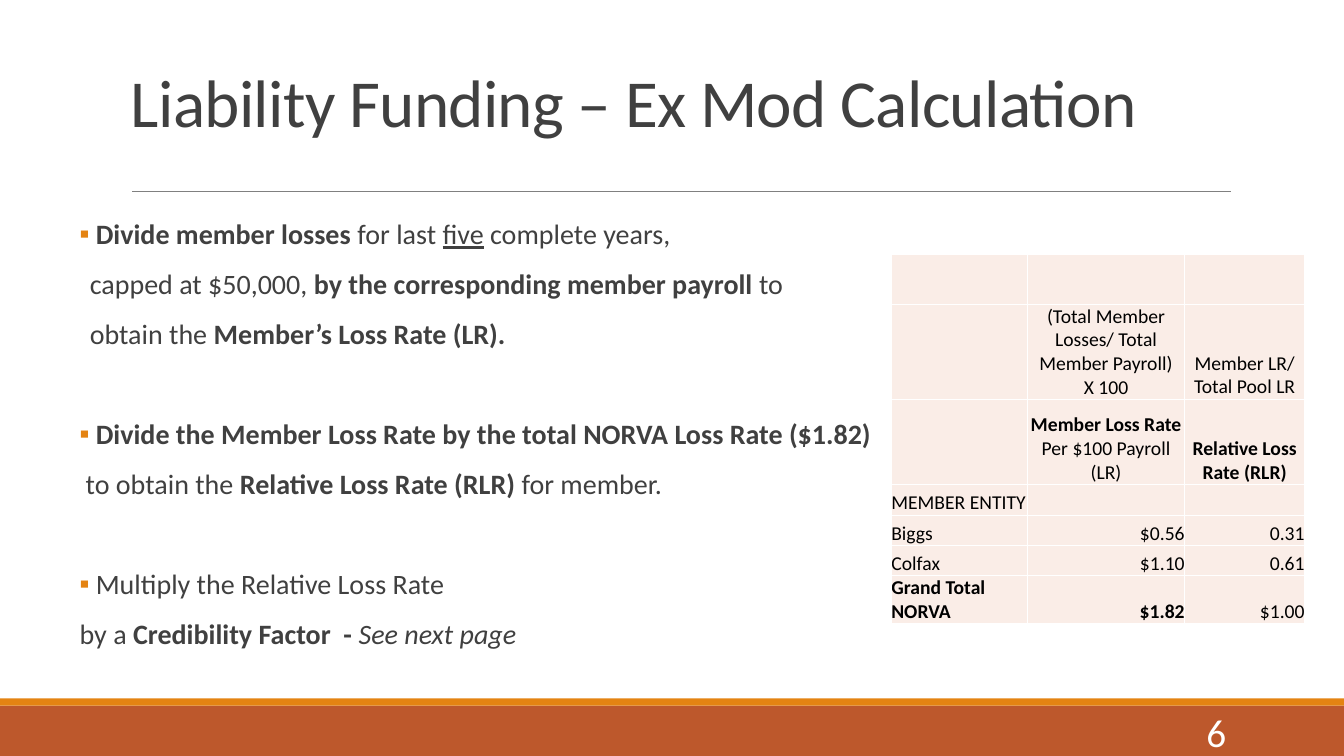
"""Build the liability funding slide with its loss rate table."""
from pptx import Presentation
from pptx.dml.color import RGBColor
from pptx.enum.shapes import MSO_CONNECTOR, MSO_SHAPE
from pptx.enum.text import MSO_ANCHOR, PP_ALIGN
from pptx.oxml.ns import qn
from pptx.util import Inches, Pt
from lxml import etree

LEFT, CENTER, RIGHT = PP_ALIGN.LEFT, PP_ALIGN.CENTER, PP_ALIGN.RIGHT
TOP, MIDDLE, BOTTOM = MSO_ANCHOR.TOP, MSO_ANCHOR.MIDDLE, MSO_ANCHOR.BOTTOM
RECTANGLE, STRAIGHT = MSO_SHAPE.RECTANGLE, MSO_CONNECTOR.STRAIGHT
RUST = RGBColor(0xBD, 0x58, 0x2C)
ORANGE = RGBColor(0xE4, 0x83, 0x12)
GRAY = RGBColor(0x80, 0x80, 0x80)
CHARCOAL = RGBColor(0x40, 0x40, 0x40)
BLUSH = RGBColor(0xFA, 0xED, 0xE7)
BLACK = RGBColor(0, 0, 0)
WHITE = RGBColor(0xFF, 0xFF, 0xFF)
FONT = "Calibri"

TITLE = "Liability Funding – Ex Mod Calculation"
PAGE_NUMBER = "6"
STEPS = [
    [
        (0.16, [("Divide member losses ", "b"), ("for last ", ""), ("five", "u"),
                (" complete years,", "")]),
        (0.1, [("capped at $50,000, ", ""),
               ("by the corresponding member payroll ", "b"), ("to", "")]),
        (0.1, [("obtain the ", ""), ("Member’s Loss Rate (LR).", "b")]),
    ],
    [
        (0.16, [("Divide the Member Loss Rate by the total NORVA Loss Rate ($1.82)", "b")]),
        (0.06, [("to obtain the ", ""), ("Relative Loss Rate (RLR)", "b"),
                (" for member.", "")]),
    ],
    [
        (0.16, [("Multiply the Relative Loss Rate", "")]),
        (0, [("by a ", ""), ("Credibility Factor  - ", "b"), ("See next page", "i")]),
    ],
]
EMPTY = [("", "")]
HEADER_ROWS = 3
COLUMN_WIDTHS = [1.35, 1.56, 1.19]
ROW_HEIGHTS = [0.5, 0.94, 0.85, 0.3, 0.3, 0.3, 0.48]
RATES = [
    [EMPTY, EMPTY, EMPTY],
    [EMPTY, [("(Total Member Losses/ Total Member Payroll)", ""), ("X 100", "")],
     [("Member LR/", ""), ("Total Pool LR", "")]],
    [EMPTY, [("Member Loss Rate", "b"), ("Per $100 Payroll (LR)", "")],
     [("Relative Loss Rate (RLR)", "b")]],
    [[("MEMBER ENTITY", "")], EMPTY, EMPTY],
    [[("Biggs", "")], [("$0.56", "")], [("0.31", "")]],
    [[("Colfax", "")], [("$1.10", "")], [("0.61", "")]],
    [[("Grand Total NORVA", "b")], [("$1.82", "b")], [("$1.00", "")]],
]


def write(para, spans, size, color, align=LEFT, tracking=None):
    """Fill a paragraph with (text, style) spans; styles are b, i and u."""
    para.alignment = align
    for text, style in spans:
        span = para.add_run()
        span.text = text
        font = span.font
        font.name, font.size, font.color.rgb = FONT, Pt(size), color
        font.bold, font.italic, font.underline = "b" in style, "i" in style, "u" in style
        if tracking is not None:
            font._element.set("spc", str(tracking))


def add_box(page, left, top, width, height, anchor, insets=(0.1, 0.05, 0.1, 0.05)):
    """Add a wrapping text box and return its frame."""
    box = page.shapes.add_textbox(Inches(left), Inches(top), Inches(width), Inches(height))
    frame = box.text_frame
    frame.word_wrap = True
    frame.vertical_anchor = anchor
    (frame.margin_left, frame.margin_top,
     frame.margin_right, frame.margin_bottom) = map(Inches, insets)
    return frame


def add_bar(page, top, height, color):
    """Add a full-width footer bar."""
    bar = page.shapes.add_shape(RECTANGLE, 0, Inches(top), Inches(13.33), Inches(height))
    bar.shadow.inherit = False
    bar.fill.solid()
    bar.fill.fore_color.rgb = color
    bar.line.fill.background()


def add_rule(page):
    """Add the thin line under the title."""
    rule = page.shapes.add_connector(STRAIGHT, Inches(1.31), Inches(1.9),
                                     Inches(12.21), Inches(1.9))
    rule.line.color.rgb = GRAY
    rule.line.width = Pt(0.5)
    etree.SubElement(rule._element.spPr, qn("a:effectLst"))


def add_bullet(para):
    """Give a paragraph an orange square bullet."""
    props = para._p.get_or_add_pPr()
    color = etree.SubElement(props, qn("a:buClr"))
    etree.SubElement(color, qn("a:srgbClr")).set("val", str(ORANGE))
    etree.SubElement(props, qn("a:buFont")).set("typeface", FONT)
    etree.SubElement(props, qn("a:buChar")).set("char", "▪")


def add_steps(page):
    """Add the calculation steps, parted by wider spacing."""
    frame = add_box(page, 0.79, 2.14, 7.91, 4.4, TOP, (0, 0.05, 0, 0.05))
    para = None
    for step in STEPS:
        for index, (margin, spans) in enumerate(step):
            first = para is None
            para = frame.paragraphs[0] if first else frame.add_paragraph()
            para.line_spacing = 0.9
            para.space_before = Pt(48 if index == 0 and not first else 12)
            para.space_after = Pt(2)
            write(para, spans, 20, CHARCOAL)
            props = para._p.get_or_add_pPr()
            props.set("marL", str(Inches(margin)))
            props.set("indent", str(-Inches(margin) if index == 0 else 0))
            if index == 0:
                add_bullet(para)


def style_cell(cell):
    """Set the cell's white borders, fill, insets and anchor."""
    props = cell._tc.get_or_add_tcPr()
    for side in ("a:lnL", "a:lnR", "a:lnT", "a:lnB"):
        border = etree.SubElement(props, qn(side))
        border.set("w", str(Pt(1)))
        fill = etree.SubElement(border, qn("a:solidFill"))
        etree.SubElement(fill, qn("a:srgbClr")).set("val", str(WHITE))
    cell.fill.solid()
    cell.fill.fore_color.rgb = BLUSH
    cell.margin_left = cell.margin_right = cell.margin_top = cell.margin_bottom = 0
    cell.vertical_anchor = BOTTOM


def add_rates(page):
    """Add the loss rate table."""
    table = page.shapes.add_table(
        len(RATES), len(COLUMN_WIDTHS), Inches(8.84), Inches(2.52),
        Inches(sum(COLUMN_WIDTHS)), Inches(sum(ROW_HEIGHTS))).table
    table.first_row = table.horz_banding = False
    for column, width in zip(table.columns, COLUMN_WIDTHS):
        column.width = Inches(width)
    for r, (height, row) in enumerate(zip(ROW_HEIGHTS, RATES)):
        table.rows[r].height = Inches(height)
        for c, lines in enumerate(row):
            cell = table.cell(r, c)
            style_cell(cell)
            align = LEFT if c == 0 else CENTER if r < HEADER_ROWS else RIGHT
            frame = cell.text_frame
            for index, line in enumerate(lines):
                para = frame.add_paragraph() if index else frame.paragraphs[0]
                write(para, [line], 14, BLACK, align=align)


def main():
    """Assemble and save the deck."""
    deck = Presentation()
    deck.slide_width, deck.slide_height = Inches(13.33), Inches(7.5)
    page = deck.slides.add_slide(deck.slide_layouts[6])
    add_bar(page, 7, 0.5, RUST)
    add_bar(page, 6.93, 0.07, ORANGE)
    add_rule(page)
    title = add_box(page, 1.2, 0.31, 11, 1.59, BOTTOM, (0.1, 0.05, 0.1, 0.5)).paragraphs[0]
    title.line_spacing = 0.85
    write(title, [(TITLE, "")], 48, CHARCOAL, tracking=-50)
    add_steps(page)
    add_rates(page)
    number = add_box(page, 10.83, 7.06, 1.43, 0.4, MIDDLE).paragraphs[0]
    write(number, [(PAGE_NUMBER, "")], 28, WHITE, align=RIGHT)
    deck.save("out.pptx")


if __name__ == "__main__":
    main()
